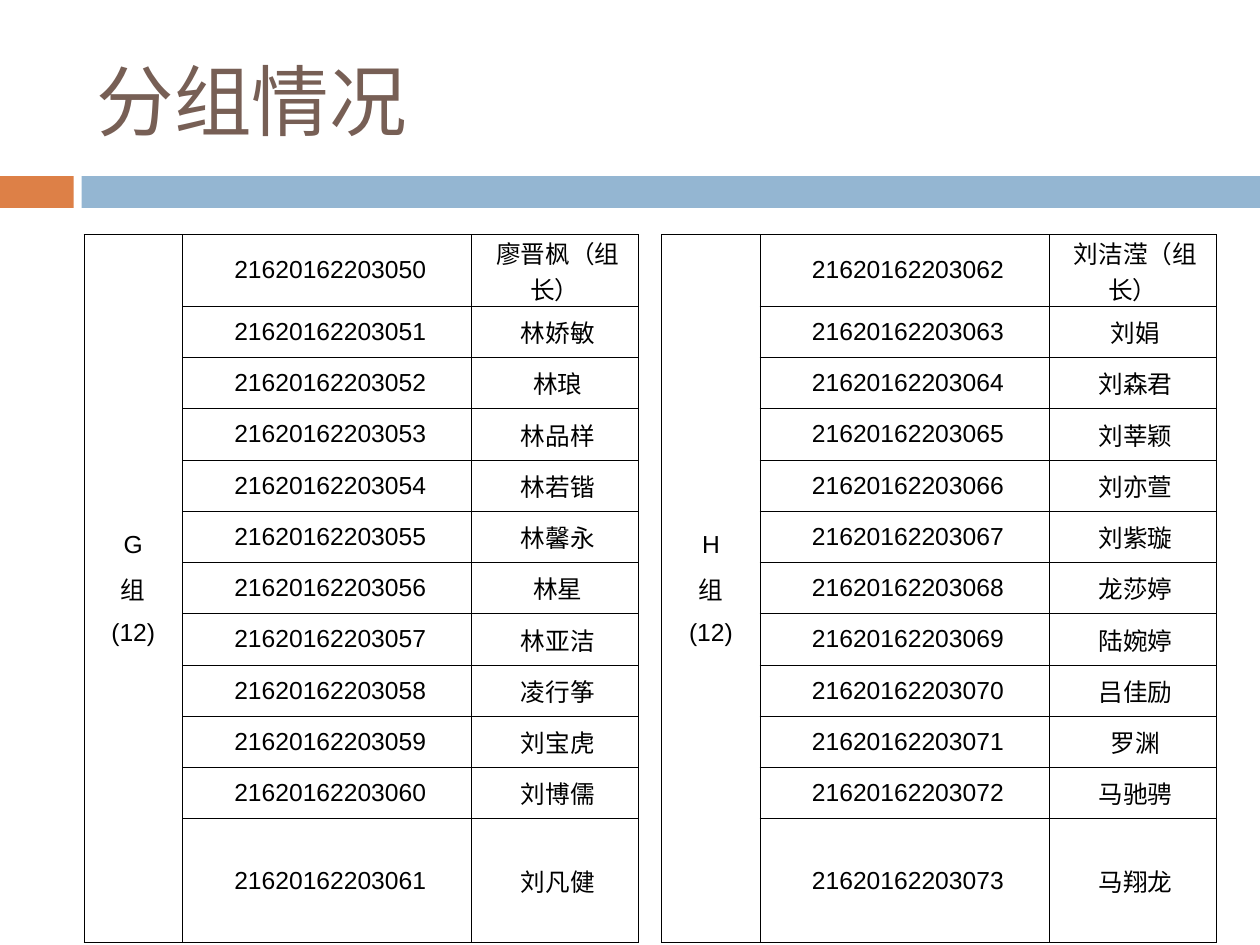
"""Builds the slide that lists the members of groups G and H."""
from dataclasses import dataclass

from lxml.etree import SubElement
from pptx import Presentation
from pptx.dml.color import RGBColor
from pptx.enum.shapes import MSO_SHAPE
from pptx.enum.text import MSO_ANCHOR, PP_ALIGN
from pptx.oxml.ns import qn
from pptx.util import Cm, Pt


@dataclass(frozen=True)
class Theme:
    title_color: str = "775F55"
    accent: str = "DD8047"
    band: str = "94B6D2"
    text: str = "000000"
    cell: str = "FFFFFF"
    title_font: str = "Calibri"
    body_font: str = "Arial"
    title_size: int = 63
    body_size: int = 20
    label_gap: int = 10
    border: float = 0.75


SLIDE_W, SLIDE_H = 36.12, 27.1
TABLE_TOP = 6.73
COLUMNS = [2.82, 8.28, 4.8]
ROWS = [2.03] + [1.47] * 10 + [3.55]
GROUPS = [
    ("G", 2.41, 21620162203050,
     ["廖晋枫（组长）", "林娇敏", "林琅", "林品样", "林若锴", "林馨永",
      "林星", "林亚洁", "凌行筝", "刘宝虎", "刘博儒", "刘凡健"]),
    ("H", 18.97, 21620162203062,
     ["刘洁滢（组长）", "刘娟", "刘森君", "刘莘颖", "刘亦萱", "刘紫璇",
      "龙莎婷", "陆婉婷", "吕佳励", "罗渊", "马驰骋", "马翔龙"]),
]


class SlideBuilder:
    def __init__(self, prs, theme):
        self.theme = theme
        self.s = prs.slides.add_slide(prs.slide_layouts[5])

    def add_run(self, p, text, font, size, color):
        r = p.add_run()
        r.text = text
        r.font.name = font
        r.font.size = Pt(size)
        r.font.color.rgb = RGBColor.from_string(color)

    def bar(self, left, width, color):
        sp = self.s.shapes.add_shape(
            MSO_SHAPE.RECTANGLE, Cm(left), Cm(5.05), Cm(width), Cm(0.91))
        sp.shadow.inherit = False
        sp.fill.solid()
        sp.fill.fore_color.rgb = RGBColor.from_string(color)
        sp.line.fill.background()

    def title(self, text):
        sp = self.s.shapes.title
        sp.left, sp.top, sp.width, sp.height = Cm(2.41), Cm(0.91), Cm(32.2), Cm(3.91)
        tf = sp.text_frame
        tf.vertical_anchor = MSO_ANCHOR.MIDDLE
        tf.margin_left = tf.margin_right = Cm(0.36)
        tf.margin_top = tf.margin_bottom = Cm(0.18)
        p = tf.paragraphs[0]
        p.alignment = PP_ALIGN.LEFT
        t = self.theme
        self.add_run(p, text, t.title_font, t.title_size, t.title_color)

    def format_cell(self, cell):
        tcPr = cell._tc.get_or_add_tcPr()
        for side in ("a:lnL", "a:lnR", "a:lnT", "a:lnB"):
            ln = SubElement(tcPr, qn(side), w=str(Pt(self.theme.border)))
            fill = SubElement(ln, qn("a:solidFill"))
            SubElement(fill, qn("a:srgbClr"), val=self.theme.text)
        cell.fill.solid()
        cell.fill.fore_color.rgb = RGBColor.from_string(self.theme.cell)
        cell.vertical_anchor = MSO_ANCHOR.MIDDLE

    def write_cell(self, cell, lines, gap=0):
        tf = cell.text_frame
        t = self.theme
        for i, line in enumerate(lines):
            p = tf.add_paragraph() if i else tf.paragraphs[0]
            p.alignment = PP_ALIGN.CENTER
            p.space_before = Pt(gap)
            self.add_run(p, line, t.body_font, t.body_size, t.text)

    def group_table(self, group, left, first_id, names):
        tbl = self.s.shapes.add_table(
            len(ROWS), len(COLUMNS), Cm(left), Cm(TABLE_TOP),
            Cm(sum(COLUMNS)), Cm(sum(ROWS))).table
        tbl.first_row = tbl.horz_banding = False
        for column, width in zip(tbl.columns, COLUMNS):
            column.width = Cm(width)
        for row, height in zip(tbl.rows, ROWS):
            row.height = Cm(height)
        for cell in tbl.iter_cells():
            self.format_cell(cell)
        label = tbl.cell(0, 0)
        label.merge(tbl.cell(len(ROWS) - 1, 0))
        self.write_cell(label, [group, "组", f"({len(names)})"], self.theme.label_gap)
        for i, name in enumerate(names):
            for j, value in enumerate((first_id + i, name), start=1):
                cell = tbl.cell(i, j)
                cell.margin_left = cell.margin_right = 0
                cell.margin_top = cell.margin_bottom = 0
                self.write_cell(cell, [f" {value}"])


def main():
    prs = Presentation()
    prs.slide_width, prs.slide_height = Cm(SLIDE_W), Cm(SLIDE_H)
    theme = Theme()
    slide = SlideBuilder(prs, theme)
    slide.bar(0, 2.11, theme.accent)
    slide.bar(2.34, SLIDE_W - 2.34, theme.band)
    slide.title("分组情况")
    for group in GROUPS:
        slide.group_table(*group)
    prs.save("out.pptx")


if __name__ == "__main__":
    main()
